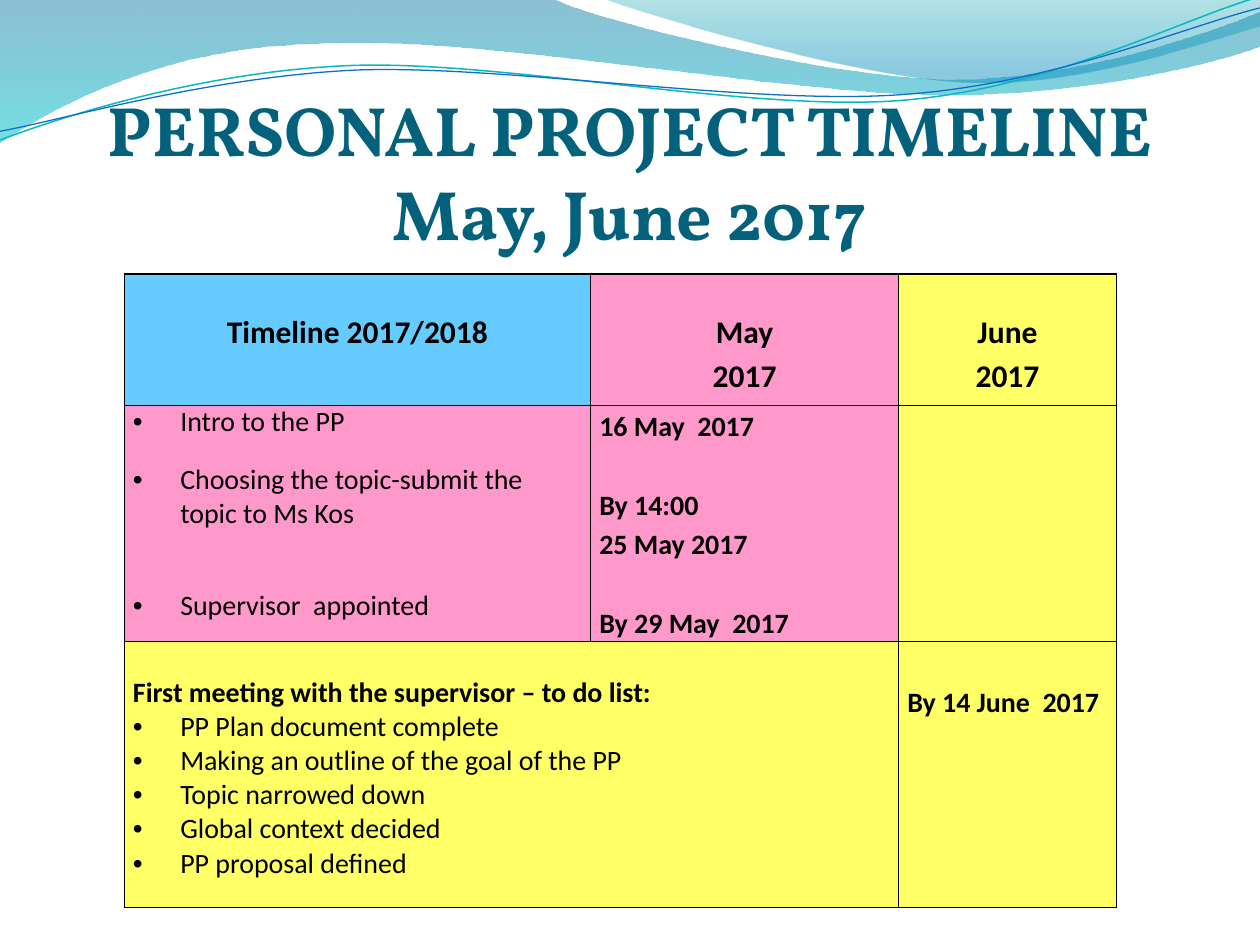
from lxml import etree
from pptx import Presentation
from pptx.dml.color import RGBColor
from pptx.enum import text as t
from pptx.oxml.ns import qn
from pptx.util import Pt

BLACK = RGBColor(0x00, 0x00, 0x00)
TITLE_BLUE = RGBColor(0x04, 0x61, 0x7B)
SKY = RGBColor(0x66, 0xCC, 0xFF)
PINK = RGBColor(0xFF, 0x99, 0xCC)
YELLOW = RGBColor(0xFF, 0xFF, 0x66)
DEEP_BLUE = RGBColor(0x00, 0x74, 0xA1)
TURQUOISE = RGBColor(0x00, 0xC6, 0xCF)
TEAL = RGBColor(0x00, 0xA1, 0xA9)
OCEAN = RGBColor(0x00, 0x8B, 0xBF)
LINE_TEAL = RGBColor(0x0A, 0xB8, 0xBF)
LINE_BLUE = RGBColor(0x0F, 0x6F, 0xC6)

# Outlines in points: a pair is a corner, six numbers are a Bézier curve.
BROAD_WAVE = [(0, 0), (317, -0.5), (343, 12, 478, 45, 546, 45),
              (614, 45, 690, 19, 720, 6.5), (720.5, 26),
              (708, 32, 626, 55, 537, 54), (448, 54, 275, 20, 185, 24.5),
              (93, 26, 33, 60, -0.5, 81.5), (0, 0)]
RIGHT_WAVE = [(345, -0.5), (366, 8, 491, 45, 554, 47),
              (616, 50, 692, 23, 720, 15), (720, 0), (345, -0.5)]
TEAL_CURVE = [(0, 80), (34.5, 67, 114, 41, 199.5, 37.5),
              (284.5, 34, 427, 64, 513.5, 57.5), (600, 51, 675, 11, 718.5, -1.5)]
BLUE_CURVE = [(0, 75), (34, 69, 118, 44, 204, 40),
              (290, 37, 430, 60.5, 516, 54), (602, 48, 677.5, 15, 720, 4.5)]


def add_outline(slide, outline, left, top, close):
    """Build a freeform, then join each three points of a curve into one Bézier."""
    points = [(Pt(left + segment[i]), Pt(top + segment[i + 1]))
              for segment in outline for i in range(0, len(segment), 2)]
    builder = slide.shapes.build_freeform(*points[0])
    builder.add_line_segments(points[1:], close=close)
    shape = builder.convert_to_shape()
    shape.shadow.inherit = False
    lines = iter(list(shape._element.iter(qn("a:lnTo"))))
    for segment in outline[1:]:
        line = next(lines)
        if len(segment) == 6:
            line.addprevious(curve := etree.Element(qn("a:cubicBezTo")))
            for part in (line, next(lines), next(lines)):
                curve.append(part[0])
                part.getparent().remove(part)
    return shape


def add_wave(slide, outline, left, top, stops):
    """Add a filled wave; each stop is position, colour and opacity in percent."""
    shape = add_outline(slide, outline, left, top, close=True)
    shape.line.fill.background()
    shape.fill.gradient()
    shape.fill.gradient_angle = 270
    for stop, (position, color, _) in zip(shape.fill.gradient_stops, stops):
        stop.position = position
        stop.color.rgb = color
    for node, (_, _, opacity) in zip(shape._element.iter(qn("a:srgbClr")), stops):
        etree.SubElement(node, qn("a:alpha"), val=str(opacity * 1000))


def add_curve(slide, outline, left, top, color, width):
    shape = add_outline(slide, outline, left, top, close=False)
    shape.fill.background()
    shape.line.color.rgb = color
    shape.line.width = Pt(width)


def add_wave_banner(slide, left, top):
    add_wave(slide, BROAD_WAVE, left, top,
             [(0, DEEP_BLUE, 45), (1, TURQUOISE, 55)])
    add_wave(slide, RIGHT_WAVE, left, top, [(0, TEAL, 30), (0.8, OCEAN, 45)])
    add_curve(slide, TEAL_CURVE, left, top, LINE_TEAL, 0.85)
    add_curve(slide, BLUE_CURVE, left, top, LINE_BLUE, 0.75)


def write(frame, content, first=False, size=16, bold=False, font="Calibri",
          color=BLACK, align=t.PP_ALIGN.LEFT, spacing=None, before=0, bullet=False):
    """Write one paragraph; a line feed in the content is a line break."""
    paragraph = frame.paragraphs[0] if first else frame.add_paragraph()
    paragraph.alignment = align
    paragraph.space_before = Pt(before)
    if spacing:
        paragraph.line_spacing = spacing
    for index, line in enumerate(content.split("\n")):
        if index:
            paragraph.add_line_break()
        run = paragraph.add_run()
        run.text = line
        run.font.size, run.font.bold, run.font.name = Pt(size), bold, font
        run.font.color.rgb = color
    if bullet:
        properties = paragraph._p.get_or_add_pPr()
        properties.set("marL", str(Pt(27)))
        properties.set("indent", str(Pt(-27)))
        etree.SubElement(properties, qn("a:buFont"), typeface="Arial")
        etree.SubElement(properties, qn("a:buChar"), char="•")


def place_title(slide, left, top, width, height):
    title = slide.shapes.title
    title.left, title.top, title.width, title.height = map(
        Pt, (left, top, width, height))
    frame = title.text_frame
    frame.auto_size = t.MSO_AUTO_SIZE.NONE
    frame.word_wrap = True
    frame.vertical_anchor = t.MSO_ANCHOR.BOTTOM
    frame.margin_left = frame.margin_right = frame.margin_bottom = 0
    write(frame, "PERSONAL PROJECT TIMELINE\nMay, June 2017", first=True, size=40,
          bold=True, font="Vollkorn", color=TITLE_BLUE, align=t.PP_ALIGN.CENTER)


def border_cell(cell, widths):
    """Draw the left, right, top and bottom edges in the given widths."""
    properties = cell._tc.get_or_add_tcPr()
    for index, (edge, width) in enumerate(zip(("lnL", "lnR", "lnT", "lnB"), widths)):
        line = etree.Element(qn(f"a:{edge}"), w=str(Pt(width)))
        fill = etree.SubElement(line, qn("a:solidFill"))
        etree.SubElement(fill, qn("a:srgbClr"), val=str(BLACK))
        properties.insert(index, line)


def fill_cell(cell, paragraphs, top=0, **common):
    """Write (content, format) pairs into a cell below a top margin."""
    cell.margin_top = Pt(top)
    for index, (content, options) in enumerate(paragraphs):
        write(cell.text_frame, content, first=index == 0, **{**common, **options})


def add_timeline(slide, left, top):
    columns, rows = (266.5, 176, 124.5), (75, 134.5, 152)
    colors = [(SKY, PINK, YELLOW), (PINK, PINK, YELLOW), (YELLOW,) * 3]
    frame = slide.shapes.add_table(3, 3, Pt(left), Pt(top),
                                   Pt(sum(columns)), Pt(sum(rows)))
    table = frame.table
    for column, width in zip(table.columns, columns):
        column.width = Pt(width)
    for row, height in zip(table.rows, rows):
        row.height = Pt(height)
    for r, row_colors in enumerate(colors):
        for c, color in enumerate(row_colors):
            cell = table.cell(r, c)
            cell.margin_left = cell.margin_right = Pt(5)
            cell.margin_top = cell.margin_bottom = 0
            cell.fill.solid()
            cell.fill.fore_color.rgb = color
            outer = (c == 0, c == 2, r == 0, r == 2)
            border_cell(cell, [1 if edge else 0.75 for edge in outer])
    table.cell(2, 0).merge(table.cell(2, 1))

    headings = (["Timeline 2017/2018"], ["May", "2017"], ["June", "2017"])
    for c, lines in enumerate(headings):
        fill_cell(table.cell(0, c), [(line, {}) for line in lines], top=19.5,
                  size=18, bold=True, spacing=1.15, align=t.PP_ALIGN.CENTER)
    fill_cell(table.cell(1, 0), [
        ("Intro to the PP", {}),
        ("Choosing the topic-submit the topic to Ms Kos", {"before": 13.5}),
        ("Supervisor  appointed", {"before": 33})], bullet=True)
    fill_cell(table.cell(1, 1), [
        ("16 May  2017", {}),
        ("By 14:00", {"before": 22.5}),
        ("25 May 2017", {}),
        ("By 29 May  2017", {"before": 22.5})], bold=True, spacing=1.15)
    tasks = ("PP Plan document complete", "Making an outline of the goal of the PP",
             "Topic narrowed down", "Global context decided", "PP proposal defined")
    fill_cell(table.cell(2, 0), [
        ("First meeting with the supervisor – to do list:", {"bold": True}),
        *((task, {"bullet": True}) for task in tasks)], top=19.5)
    fill_cell(table.cell(2, 2), [("By 14 June  2017", {})], top=22.5,
              bold=True, spacing=1.15)


def main():
    presentation = Presentation()
    presentation.slide_width, presentation.slide_height = Pt(720), Pt(540)
    slide = presentation.slides.add_slide(presentation.slide_layouts[5])
    add_wave_banner(slide, 0, 0)
    place_title(slide, 36, 55.5, 648, 90)
    add_timeline(slide, 71, 156.5)
    presentation.save("out.pptx")


if __name__ == "__main__":
    main()
